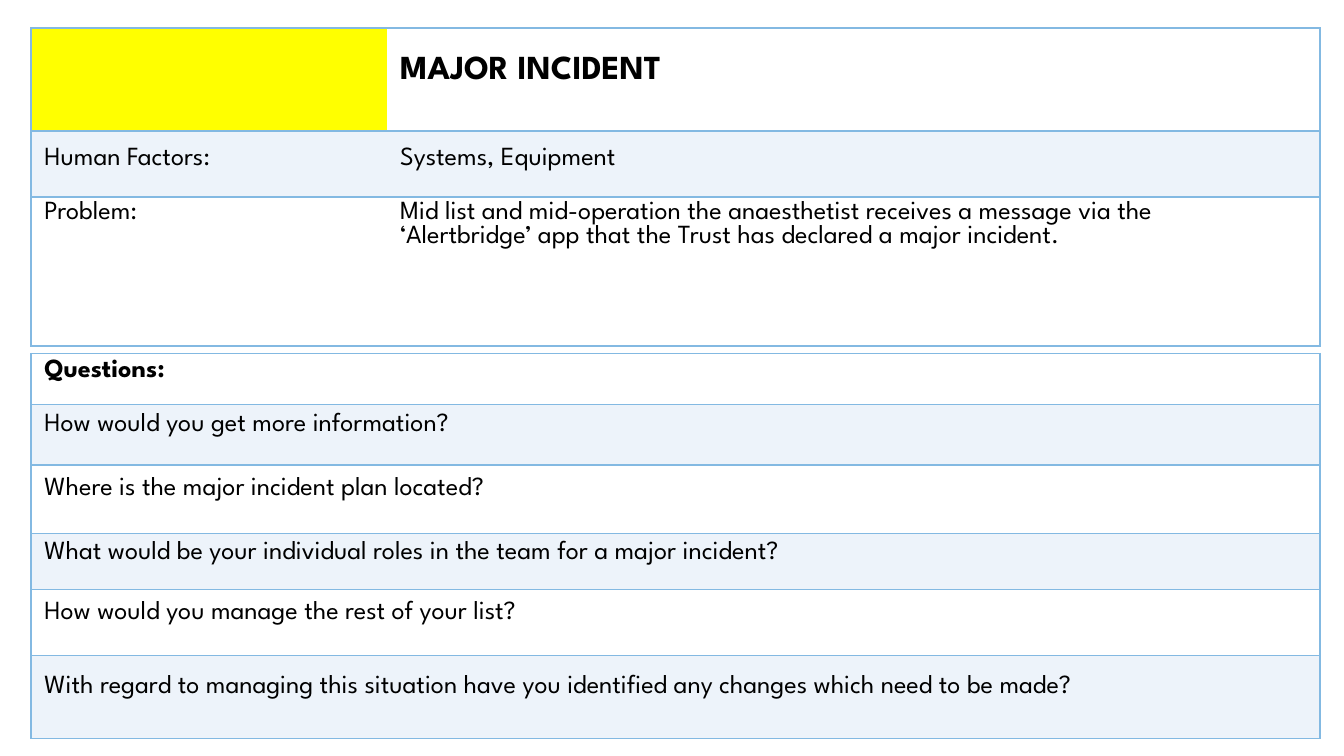
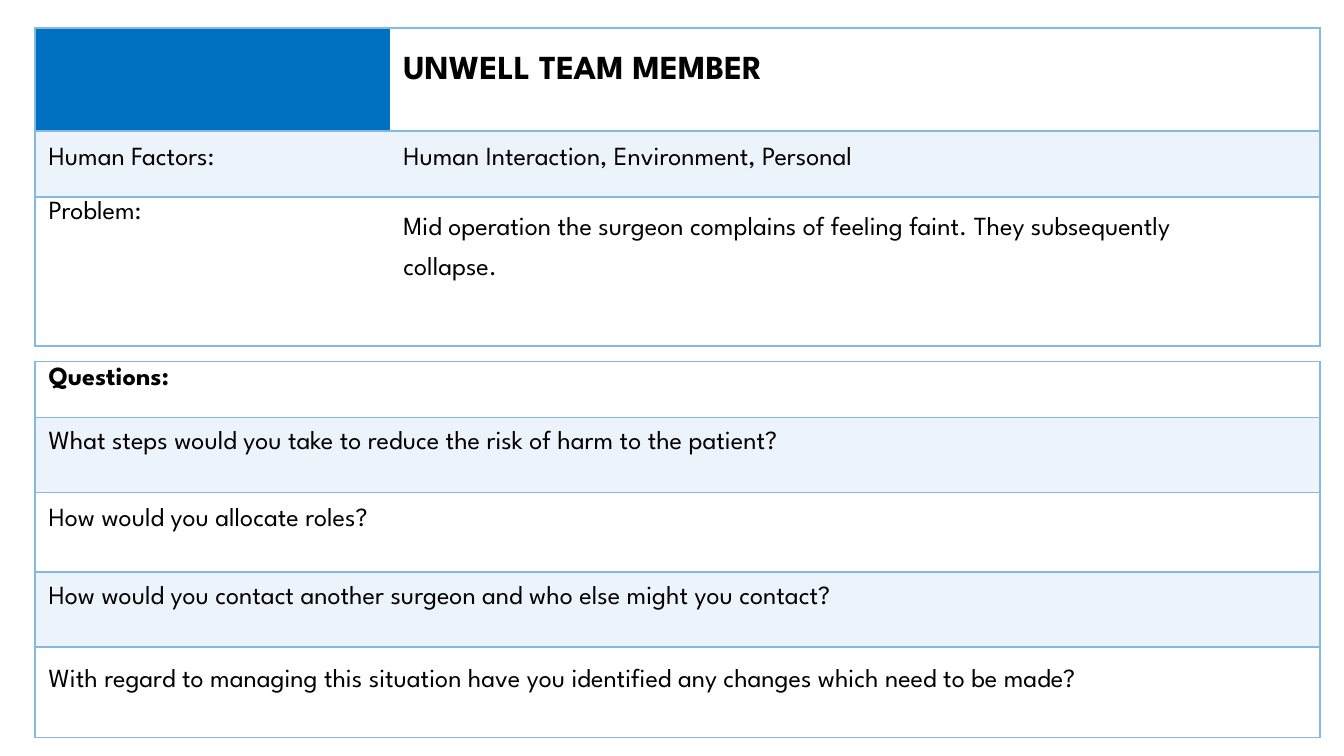
from lxml import etree
from pptx import Presentation
from pptx.dml.color import RGBColor
from pptx.enum.text import MSO_ANCHOR
from pptx.oxml.ns import qn
from pptx.util import Pt

TOP = MSO_ANCHOR.TOP
BORDER, TINT, WHITE, BLACK = "83B9E2", "EDF3FA", "FFFFFF", "000000"
FONT = "League Spartan"
BLANK_LAYOUT = 6
INDENT = 7.2
HEAD_TOP = 15
HEAD_ROWS = [55.3, 35.3, 79.8]
LAST_QUESTION = ("With regard to managing this situation have you identified "
                 "any changes which need to be made?")


def rgb(color):
    return RGBColor.from_string(color)


def write(tf, text, size=14, bold=False, spacing=None):
    p = tf.paragraphs[0]
    if spacing:
        p.line_spacing = spacing
    p.font.size = Pt(size)
    r = p.add_run()
    r.text = text
    r.font.name = FONT
    r.font.size = Pt(size)
    r.font.bold = bold
    r.font.color.rgb = rgb(BLACK)


class Deck:
    def __init__(self, prs):
        self.prs = prs
        self.s = None

    def new_slide(self):
        layout = self.prs.slide_layouts[BLANK_LAYOUT]
        self.s = self.prs.slides.add_slide(layout)

    def table(self, left, top, cols, rows):
        """Add a plain table from column widths and row heights."""
        frame = self.s.shapes.add_table(
            len(rows), len(cols), Pt(left), Pt(top), Pt(sum(cols)), Pt(sum(rows)))
        table = frame.table
        table.first_row = table.horz_banding = False
        for column, width in zip(table.columns, cols):
            column.width = Pt(width)
        for row, height in zip(table.rows, rows):
            row.height = Pt(height)
        return table

    def borders(self, cell, sides):
        """Rule the named sides (of L, R, T, B) and clear the others."""
        tc_pr = cell._tc.get_or_add_tcPr()
        for side in "LRTB":
            ln = etree.SubElement(tc_pr, qn(f"a:ln{side}"), w=str(Pt(1)))
            if side in sides:
                fill = etree.SubElement(ln, qn("a:solidFill"))
                etree.SubElement(fill, qn("a:srgbClr"), val=BORDER)
            else:
                etree.SubElement(ln, qn("a:noFill"))

    def cell(self, cell, text="", fill=None, sides="LRTB", inset=0, right=0,
             **fmt):
        self.borders(cell, sides)
        if fill:
            cell.fill.solid()
            cell.fill.fore_color.rgb = rgb(fill)
        else:
            cell.fill.background()
        cell.vertical_anchor = TOP
        cell.margin_left, cell.margin_top = Pt(INDENT), Pt(inset)
        cell.margin_right, cell.margin_bottom = Pt(right), Pt(0)
        if text:
            write(cell.text_frame, text, **fmt)

    def scenario(self, left, cols, color, title, factors, problem, inset, spacing):
        """Upper table: colour code, title, human factors and problem."""
        table = self.table(left, HEAD_TOP, cols, HEAD_ROWS)
        labels = [dict(fill=color),
                  dict(text="Human Factors:", fill=TINT, inset=8.6),
                  dict(text="Problem:", fill=WHITE, inset=2.2)]
        values = [dict(text=title, inset=15, size=18, bold=True),
                  dict(text=factors, fill=TINT, inset=8.6),
                  dict(text=problem, fill=WHITE, inset=inset, right=54,
                       spacing=spacing)]
        for i, (label, value) in enumerate(zip(labels, values)):
            self.cell(table.cell(i, 0), sides="LTB", **label)
            self.cell(table.cell(i, 1), sides="RTB", **value)

    def questions(self, left, top, width, head, items):
        """Lower table: items are (row height, top inset, question)."""
        items = items[:]
        rows = [head[0]] + [height for height, _, _ in items]
        table = self.table(left, top, [width], rows)
        self.cell(table.cell(0, 0), "Questions:", inset=head[1], bold=True)
        for i, (_, inset, text) in enumerate(items, 1):
            self.cell(table.cell(i, 0), text, fill=TINT if i % 2 else WHITE,
                      inset=inset,
                      spacing=Pt(21) if text == LAST_QUESTION else None)


def main():
    prs = Presentation()
    prs.slide_width, prs.slide_height = Pt(720), Pt(405)
    deck = Deck(prs)

    # Major incident
    deck.new_slide()
    left, cols = 16.6, [190.6, 500]
    deck.scenario(
        left, cols, "FFFF00", "MAJOR INCIDENT", "Systems, Equipment",
        "Mid list and mid-operation the anaesthetist receives a message via the "
        "‘Alertbridge’ app that the Trust has declared a major incident.",
        inset=2.2, spacing=0.99)
    deck.questions(left, 189.4, sum(cols), (27.4, 2.9), [
        (32.4, 4.8, "How would you get more information?"),
        (36.7, 6.5, "Where is the major incident plan located?"),
        (30, 3.8, "What would be your individual roles in the team for a "
                  "major incident?"),
        (35.3, 6, "How would you manage the rest of your list?"),
        (44.6, 2.6, LAST_QUESTION),
    ])

    # Unwell team member
    deck.new_slide()
    left, cols = 18.9, [190, 498.2]
    deck.scenario(
        left, cols, "0070C0", "UNWELL TEAM MEMBER",
        "Human Interaction, Environment, Personal",
        "Mid operation the surgeon complains of feeling faint. They "
        "subsequently collapse.",
        inset=3, spacing=Pt(21))
    deck.questions(left, 193.6, sum(cols), (30, 3.1), [
        (40.3, 7.4, "What steps would you take to reduce the risk of harm to "
                    "the patient?"),
        (42.6, 8.4, "How would you allocate roles?"),
        (40.3, 7.7, "How would you contact another surgeon and who else might "
                    "you contact?"),
        (48.4, 3.5, LAST_QUESTION),
    ])

    prs.save("out.pptx")


if __name__ == "__main__":
    main()
